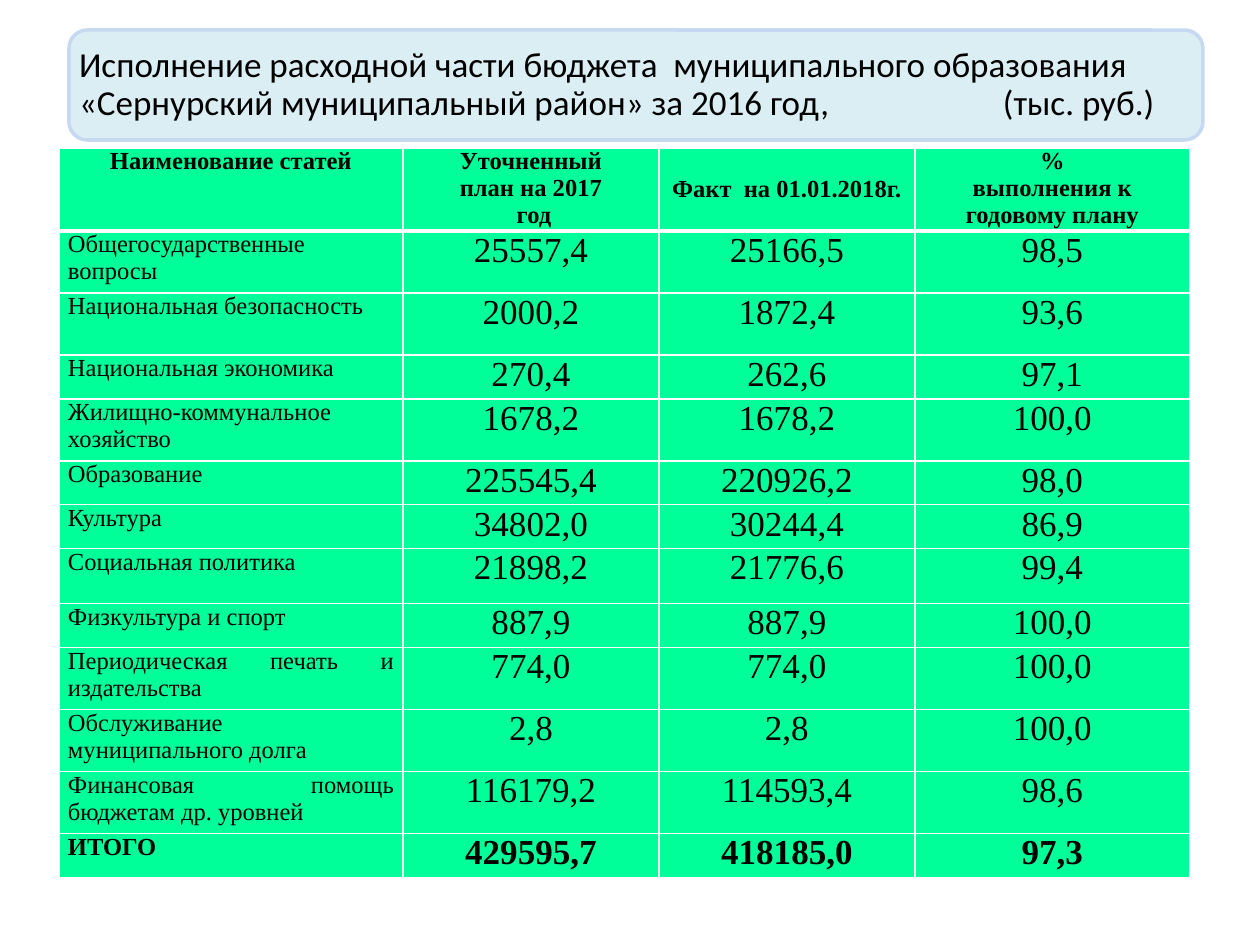
from dataclasses import dataclass

from lxml import etree
from pptx import Presentation
from pptx.dml.color import RGBColor
from pptx.enum.shapes import MSO_SHAPE
from pptx.enum.text import MSO_ANCHOR, MSO_AUTO_SIZE, PP_ALIGN
from pptx.oxml.ns import qn
from pptx.util import Emu, Pt

PX = 914400 // 126
ROUNDED = MSO_SHAPE.ROUNDED_RECTANGLE
TOP, MIDDLE = MSO_ANCHOR.TOP, MSO_ANCHOR.MIDDLE
LEFT, CENTER, JUSTIFY = PP_ALIGN.LEFT, PP_ALIGN.CENTER, PP_ALIGN.JUSTIFY
NO_AUTOFIT = MSO_AUTO_SIZE.NONE


@dataclass(frozen=True)
class Theme:
    """Colours, fonts and type sizes of the slide."""
    panel: str = "DBEEF4"
    panel_line: str = "C6D9F1"
    cell: str = "00FF99"
    grid: str = "FFFFFF"
    text: str = "000000"
    title_font: str = "Calibri"
    table_font: str = "Times New Roman"
    title_size: int = 20
    label_size: int = 14
    value_size: int = 20


THEME = Theme()
TITLE = ("Исполнение расходной части бюджета  муниципального образования "
         "«Сернурский муниципальный район» за 2016 год,\t(тыс. руб.)")
HEADER = ("Наименование статей", "Уточненный\nплан на 2017\n год",
          "Факт  на 01.01.2018г.", "%\nвыполнения к\nгодовому плану")
COLUMNS = (344, 256, 256, 275)
HEADER_HEIGHT, SHORT, MEDIUM, TALL = 83, 44, 55, 62
ITEMS = (
    (TALL, LEFT, "Общегосударственные вопросы", "25557,4", "25166,5", "98,5"),
    (TALL, LEFT, "Национальная безопасность", "2000,2", "1872,4", "93,6"),
    (SHORT, LEFT, "Национальная экономика", "270,4", "262,6", "97,1"),
    (TALL, LEFT, "Жилищно-коммунальное хозяйство", "1678,2", "1678,2", "100,0"),
    (SHORT, JUSTIFY, "Образование", "225545,4", "220926,2", "98,0"),
    (SHORT, JUSTIFY, "Культура", "34802,0", "30244,4", "86,9"),
    (MEDIUM, JUSTIFY, "Социальная политика", "21898,2", "21776,6", "99,4"),
    (SHORT, JUSTIFY, "Физкультура и спорт", "887,9", "887,9", "100,0"),
    (TALL, JUSTIFY, "Периодическая печать и издательства", "774,0", "774,0", "100,0"),
    (TALL, JUSTIFY, "Обслуживание муниципального долга", "2,8", "2,8", "100,0"),
    (TALL, JUSTIFY, "Финансовая помощь бюджетам др. уровней", "116179,2", "114593,4", "98,6"),
    (SHORT, JUSTIFY, "ИТОГО", "429595,7", "418185,0", "97,3"),
)


def px(n):
    """Turn whole pixels into EMU."""
    return Emu(n * PX)


def rgb(value):
    """Turn a hex string into a colour."""
    return RGBColor.from_string(value)


def format_text(tf, font, size, align, bold=False):
    """Format every paragraph and run of a text frame."""
    for p in tf.paragraphs:
        p.alignment = align
        for r in p.runs:
            r.font.name, r.font.size, r.font.bold = font, Pt(size), bold
            r.font.color.rgb = rgb(THEME.text)


def add_tab_stop(p, position):
    """Give a paragraph one left tab stop."""
    tabs = etree.SubElement(p._p.get_or_add_pPr(), qn("a:tabLst"))
    etree.SubElement(tabs, qn("a:tab"), pos=str(px(position)), algn="l")


def add_heading(slide, x, y, w, h):
    """Place the rounded panel and the title on it."""
    box = [px(n) for n in (x, y, w, h)]
    panel = slide.shapes.add_shape(ROUNDED, *box)
    panel.shadow.inherit = False
    panel.fill.solid()
    panel.fill.fore_color.rgb = rgb(THEME.panel)
    panel.line.color.rgb = rgb(THEME.panel_line)
    panel.line.width = Pt(2)

    title = slide.shapes.title
    title.left, title.top, title.width, title.height = box
    slide.shapes._spTree.append(title._element)
    tf = title.text_frame
    tf.text = TITLE
    tf.word_wrap, tf.auto_size, tf.vertical_anchor = True, NO_AUTOFIT, MIDDLE
    tf.margin_left = tf.margin_right = tf.margin_top = tf.margin_bottom = px(10)
    format_text(tf, THEME.title_font, THEME.title_size, LEFT)
    tf.paragraphs[0].line_spacing = 0.9
    add_tab_stop(tf.paragraphs[0], 924)


def set_borders(cell, top, bottom):
    """Draw the four borders of a cell, widths in points."""
    tc_pr = cell._tc.get_or_add_tcPr()
    for side, width in (("L", 1), ("R", 1), ("T", top), ("B", bottom)):
        ln = etree.SubElement(tc_pr, qn(f"a:ln{side}"), w=str(Pt(width)))
        fill = etree.SubElement(ln, qn("a:solidFill"))
        etree.SubElement(fill, qn("a:srgbClr"), val=THEME.grid)


def fill_cell(cell, text, size, align, bold, anchor=TOP, top=1, bottom=1):
    """Write and format one table cell."""
    set_borders(cell, top, bottom)
    cell.fill.solid()
    cell.fill.fore_color.rgb = rgb(THEME.cell)
    cell.margin_left = cell.margin_right = px(9)
    cell.margin_top = cell.margin_bottom = 0
    cell.vertical_anchor = anchor
    cell.text_frame.text = text
    format_text(cell.text_frame, THEME.table_font, size, align, bold)


def add_budget_table(slide, x, y):
    """Place the table of budget items with its header and total."""
    heights = [HEADER_HEIGHT] + [item[0] for item in ITEMS]
    frame = slide.shapes.add_table(len(heights), len(COLUMNS), px(x), px(y),
                                   px(sum(COLUMNS)), px(sum(heights)))
    table = frame.table
    for column, width in zip(table.columns, COLUMNS):
        column.width = px(width)
    for row, height in zip(table.rows, heights):
        row.height = px(height)
    for c, text in enumerate(HEADER):
        anchor = MIDDLE if c == 2 else TOP
        fill_cell(table.cell(0, c), text, THEME.label_size, CENTER, True, anchor, bottom=3)
    for i, (_, align, label, *values) in enumerate(ITEMS, 1):
        bold, top = i == len(ITEMS), 3 if i == 1 else 1
        fill_cell(table.cell(i, 0), label, THEME.label_size, align, bold, top=top)
        for c, value in enumerate(values, 1):
            fill_cell(table.cell(i, c), value, THEME.value_size, CENTER, bold, top=top)


def main():
    """Build and save the presentation."""
    prs = Presentation()
    prs.slide_width, prs.slide_height = px(1260), px(945)
    slide = prs.slides.add_slide(prs.slide_layouts[5])
    add_heading(slide, 69, 30, 1134, 110)
    add_budget_table(slide, 59, 148)
    prs.save("out.pptx")


if __name__ == "__main__":
    main()
